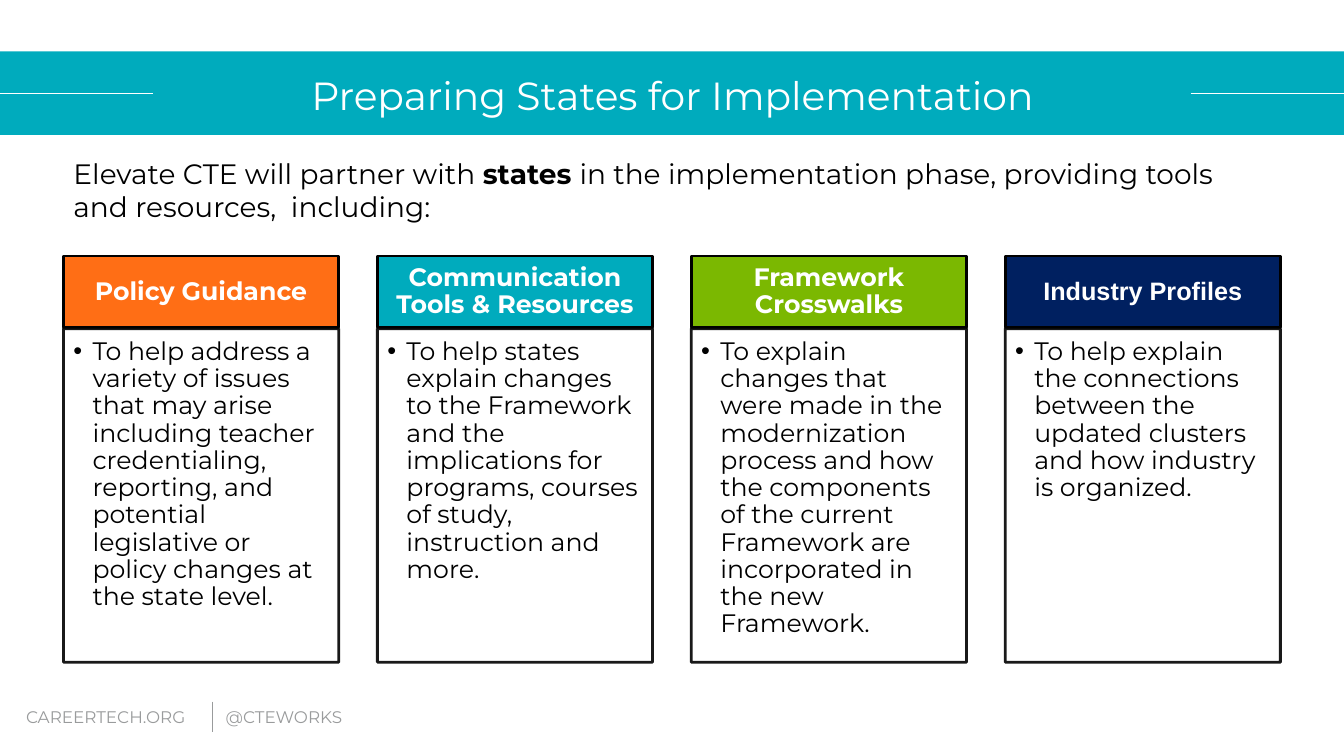
from lxml import etree
from pptx import Presentation
from pptx.dml.color import RGBColor
from pptx.enum.shapes import MSO_CONNECTOR as CONNECTOR, MSO_SHAPE as SHAPE
from pptx.enum.text import MSO_ANCHOR as ANCHOR, PP_ALIGN as ALIGN
from pptx.oxml.ns import qn
from pptx.util import Inches, Pt

TEAL = RGBColor(0x00, 0xAB, 0xBD)
ORANGE = RGBColor(0xFF, 0x6E, 0x15)
GREEN = RGBColor(0x7B, 0xB8, 0x01)
NAVY = RGBColor(0x00, 0x20, 0x60)
GRAY = RGBColor(0x99, 0x9B, 0x9C)
WHITE = RGBColor(0xFF, 0xFF, 0xFF)
BLACK = RGBColor(0x00, 0x00, 0x00)
BODY_FONT = "Montserrat"

prs = Presentation()
prs.slide_width, prs.slide_height = Inches(13.33), Inches(7.5)
slide = prs.slides.add_slide(prs.slide_layouts[6])
shapes = slide.shapes


def add_box(left, top, width, height, fill=None, line=None):
    """Add a text box, or a filled rectangle when a fill is given."""
    area = [Inches(v) for v in (left, top, width, height)]
    if fill is None:
        return shapes.add_textbox(*area)
    box = shapes.add_shape(SHAPE.RECTANGLE, *area)
    box.shadow.inherit = False
    box.fill.solid()
    box.fill.fore_color.rgb = fill
    if line is None:
        box.line.fill.background()
    else:
        box.line.color.rgb = line
        box.line.width = Pt(2)
    return box


def write(box, runs, size, color, margins=(0.1, 0.05, 0.1, 0.05), bold=False,
          font=BODY_FONT, align=ALIGN.LEFT, anchor=ANCHOR.TOP, spacing=None, bullet=False):
    """Write one paragraph into a box and return it."""
    frame = box.text_frame
    frame.word_wrap = True
    frame.vertical_anchor = anchor
    (frame.margin_left, frame.margin_top,
     frame.margin_right, frame.margin_bottom) = [Inches(m) for m in margins]
    paragraph = frame.paragraphs[0]
    paragraph.alignment = align
    if spacing:
        paragraph.line_spacing = spacing
    if bullet:
        props = paragraph._p.get_or_add_pPr()
        props.set("marL", str(Inches(0.19)))
        props.set("indent", str(Inches(-0.19)))
        etree.SubElement(props, qn("a:buFont")).set("typeface", "Arial")
        etree.SubElement(props, qn("a:buChar")).set("char", "•")
    for text in runs:
        paragraph.add_run().text = text
    paragraph.font.name = font
    paragraph.font.size = Pt(size)
    paragraph.font.color.rgb = color
    if bold:
        paragraph.font.bold = True
    return paragraph


# Title band
band = add_box(0, 0.51, 13.33, 0.83, fill=TEAL)
title = add_box(1.64, 0.51, 10.06, 0.83)
write(title, ["Preparing States for Implementation"], 28, WHITE, margins=(0, 0.1, 0, 0),
      align=ALIGN.CENTER, anchor=ANCHOR.MIDDLE, spacing=0.9)

# Rules beside the title and in the footer
for x1, y1, x2, y2, color in [
    (0, 0.93, 1.52, 0.93, WHITE),
    (11.81, 0.93, 13.33, 0.93, WHITE),
    (2.11, 6.96, 2.11, 7.26, GRAY),
]:
    rule = shapes.add_connector(CONNECTOR.STRAIGHT, Inches(x1), Inches(y1),
                                Inches(x2), Inches(y2))
    rule.line.color.rgb = color
    rule.line.width = Pt(0.75)
    etree.SubElement(rule._element.spPr, qn("a:effectLst"))

# Footer
for left, width, contact in [(0.16, 1.96, "CAREERTECH.ORG"), (2.14, 1.48, "@CTEWORKS")]:
    write(add_box(left, 6.96, width, 0.3), [contact], 12, GRAY)

# Introduction
intro = write(add_box(0.63, 1.5, 11.85, 1.11), [
    "Elevate CTE will partner with ",
    "states ",
    "in the implementation phase, providing tools and resources,  including:",
], 20, BLACK)
intro.runs[1].font.bold = True

# Four columns of support
supports = [
    ("Policy Guidance", ORANGE, BODY_FONT,
     "To help address a variety of issues that may arise including teacher credentialing, "
     "reporting, and potential legislative or policy changes at the state level."),
    ("Communication Tools & Resources", TEAL, BODY_FONT,
     "To help states explain changes to the Framework and the implications for programs, "
     "courses of study, instruction and more."),
    ("Framework Crosswalks", GREEN, BODY_FONT,
     "To explain changes that were made in the modernization process and how the components "
     "of the current Framework are incorporated in the new Framework."),
    ("Industry Profiles", NAVY, "Arial",
     "To help explain the connections between the updated clusters and how industry "
     "is organized."),
]
first_left, last_left = 0.63, 9.97
column_pitch = (last_left - first_left) / (len(supports) - 1)
for column, (heading, color, heading_font, detail) in enumerate(supports):
    left = first_left + column * column_pitch
    header = add_box(left, 2.54, 2.73, 0.71, fill=color, line=BLACK)
    write(header, [heading], 18, WHITE, margins=(0.14, 0.08, 0.14, 0.08), bold=True,
          font=heading_font, align=ALIGN.CENTER, anchor=ANCHOR.MIDDLE, spacing=0.9)

    body = add_box(left, 3.26, 2.73, 3.31, fill=WHITE, line=BLACK)
    line_color = body.line._ln.find(".//" + qn("a:srgbClr"))
    etree.SubElement(line_color, qn("a:alpha")).set("val", "90000")
    write(body, [detail], 18, BLACK, margins=(0.1, 0.1, 0.14, 0.16), spacing=0.9, bullet=True)

prs.save("out.pptx")
